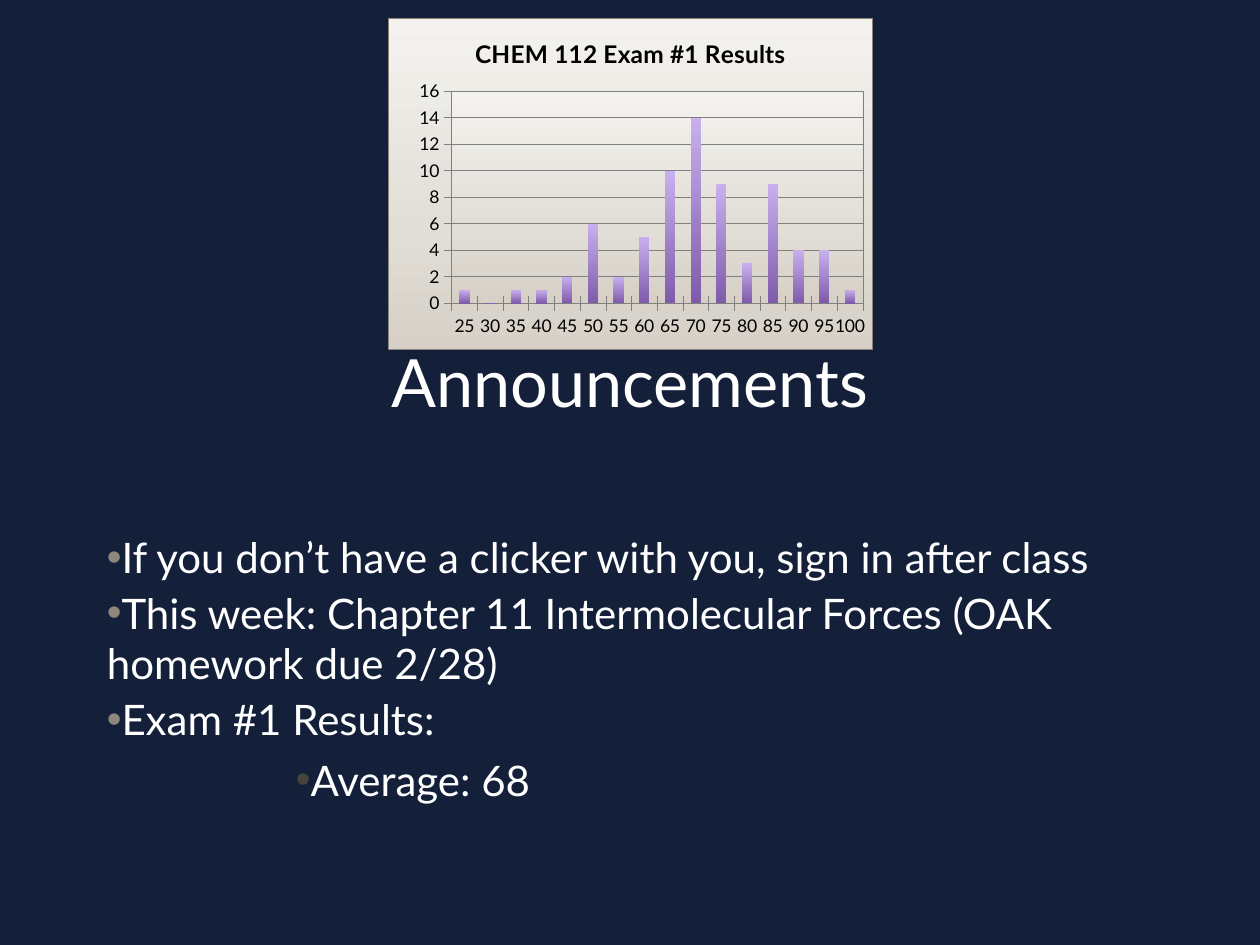
from dataclasses import dataclass

from lxml import etree
from pptx import Presentation
from pptx.chart.data import CategoryChartData
from pptx.dml.color import RGBColor
from pptx.enum.chart import XL_CHART_TYPE as ChartType, XL_TICK_MARK as TickMark
from pptx.enum.text import MSO_ANCHOR as Anchor, MSO_AUTO_SIZE as AutoSize, PP_ALIGN as Align
from pptx.oxml import parse_xml
from pptx.oxml.ns import nsdecls, qn
from pptx.util import Inches, Pt


@dataclass(frozen=True)
class Theme:
    font: str = "Lato"
    background: str = "142039"
    text: str = "FFFFFF"
    chart_text: str = "000000"
    axis: str = "808080"
    border: str = "8B8579"
    bullet: str = "8E887C"
    sub_bullet: str = "47443E"
    title_size: float = 38
    body_size: float = 24
    chart_title_size: float = 14
    chart_size: float = 10
    hairline: float = 0.25
    border_width: float = 0.75


@dataclass(frozen=True)
class Gradient:
    stops: tuple
    angle: int


@dataclass(frozen=True)
class Bullet:
    text: str
    color: str
    level: int = 0
    indent: float = 0
    space_before: float = 3


THEME = Theme()
PANEL = Gradient(((0, "D6D0C6"), (35, "E1DED7"), (100, "F4F2EF")), 270)
BARS = Gradient(((0, "C8B0ED"), (100, "7F5BAB")), 90)

ANNOUNCEMENTS = (
    Bullet("If you don’t have a clicker with you, sign in after class", THEME.bullet),
    Bullet("This week: Chapter 11 Intermolecular Forces (OAK homework due 2/28)", THEME.bullet),
    Bullet("Exam #1 Results:", THEME.bullet),
    Bullet("Average: 68", THEME.sub_bullet, level=3, indent=1.5, space_before=6),
)
SCORES = range(25, 101, 5)
COUNTS = (1, 0, 1, 1, 2, 6, 2, 5, 10, 14, 9, 3, 9, 4, 4, 1)
PLOT_LAYOUT = {"x": 0.13, "y": 0.22, "w": 0.85, "h": 0.64}


def style_font(font, size: float, color: str, bold: bool = False) -> None:
    font.name = THEME.font
    font.size = Pt(size)
    font.bold = bold
    font.color.rgb = RGBColor.from_string(color)


def place(box, left: float, top: float, width: float, height: float) -> None:
    box.left, box.top = Inches(left), Inches(top)
    box.width, box.height = Inches(width), Inches(height)


def gradient_properties(gradient: Gradient, line_color: str = "", line_width: float = 0):
    stops = "".join(
        f'<a:gs pos="{position * 1000}"><a:srgbClr val="{color}"/></a:gs>'
        for position, color in gradient.stops
    )
    paint = f'<a:solidFill><a:srgbClr val="{line_color}"/></a:solidFill>' if line_color else "<a:noFill/>"
    return parse_xml(
        f'<c:spPr {nsdecls("c", "a")}><a:gradFill><a:gsLst>{stops}</a:gsLst>'
        f'<a:lin ang="{gradient.angle * 60000}" scaled="0"/></a:gradFill>'
        f'<a:ln w="{int(Pt(line_width))}">{paint}</a:ln></c:spPr>'
    )


def style_line(line) -> None:
    line.color.rgb = RGBColor.from_string(THEME.axis)
    line.width = Pt(THEME.hairline)


def set_plot_layout(plot_area) -> None:
    for layout in plot_area.findall(qn("c:layout")):
        plot_area.remove(layout)
    modes = '<c:layoutTarget val="inner"/><c:xMode val="edge"/><c:yMode val="edge"/>'
    sizes = "".join(f'<c:{key} val="{value}"/>' for key, value in PLOT_LAYOUT.items())
    plot_area.insert(0, parse_xml(
        f'<c:layout {nsdecls("c")}><c:manualLayout>{modes}{sizes}</c:manualLayout></c:layout>'
    ))


def add_title(page) -> None:
    title = page.shapes.title
    place(title, 0.75, 1.78, 8.5, 1.61)
    frame = title.text_frame
    frame.text = "Announcements"
    frame.auto_size = AutoSize.NONE
    frame.vertical_anchor = Anchor.BOTTOM
    para = frame.paragraphs[0]
    para.alignment = Align.CENTER
    style_font(para.runs[0].font, THEME.title_size, THEME.text)


def add_bullets(page, bullets: tuple) -> None:
    box = page.shapes.add_textbox(Inches(0.75), Inches(4.17), Inches(8.92), Inches(2.59))
    frame = box.text_frame
    frame.word_wrap = True
    frame.text = "\n".join(bullet.text for bullet in bullets)
    for para, bullet in zip(frame.paragraphs, bullets):
        para.level = bullet.level
        para.alignment = Align.LEFT
        para.space_before = Pt(bullet.space_before)
        style_font(para.runs[0].font, THEME.body_size, THEME.text)
        properties = para._p.get_or_add_pPr()
        properties.set("marL", str(int(Inches(bullet.indent))))
        properties.set("indent", "0")
        color = etree.SubElement(properties, qn("a:buClr"))
        etree.SubElement(color, qn("a:srgbClr"), val=bullet.color)
        etree.SubElement(properties, qn("a:buFont"), typeface="Arial")
        etree.SubElement(properties, qn("a:buChar"), char="•")


def add_results_chart(page) -> None:
    data = CategoryChartData()
    data.categories = [str(score) for score in SCORES]
    data.add_series("Series 1", COUNTS)
    chart = page.shapes.add_chart(
        ChartType.COLUMN_CLUSTERED, Inches(3.08), Inches(0.14), Inches(3.85), Inches(2.64), data
    ).chart
    style_font(chart.font, THEME.chart_size, THEME.chart_text)
    chart.has_legend = False
    chart.has_title = True
    title = chart.chart_title.text_frame
    title.text = "CHEM 112 Exam #1 Results"
    style_font(title.paragraphs[0].runs[0].font, THEME.chart_title_size, THEME.chart_text, bold=True)

    for axis in (chart.category_axis, chart.value_axis):
        axis.major_tick_mark = TickMark.CROSS
        axis.minor_tick_mark = TickMark.NONE
        style_line(axis.format.line)
    counts = chart.value_axis
    counts.minimum_scale, counts.maximum_scale, counts.major_unit = 0, 16, 2
    counts.has_major_gridlines = True
    style_line(counts.major_gridlines.format.line)

    plot = chart.plots[0]
    plot.vary_by_categories = False
    plot.gap_width = 150
    bars = plot.series[0]
    bars.format.fill.background()
    old_properties = bars._element.find(qn("c:spPr"))
    bars._element.replace(old_properties, gradient_properties(BARS))

    space = chart._chartSpace
    plot_area = space.chart.plotArea
    set_plot_layout(plot_area)
    plot_area.append(gradient_properties(PANEL, THEME.axis, THEME.hairline))
    space.find(qn("c:txPr")).addprevious(gradient_properties(PANEL, THEME.border, THEME.border_width))


def main() -> None:
    deck = Presentation()
    deck.slide_width, deck.slide_height = Inches(10), Inches(7.5)
    page = deck.slides.add_slide(deck.slide_layouts[5])
    page.background.fill.solid()
    page.background.fill.fore_color.rgb = RGBColor.from_string(THEME.background)
    add_title(page)
    add_bullets(page, ANNOUNCEMENTS)
    add_results_chart(page)
    deck.save("out.pptx")


if __name__ == "__main__":
    main()
